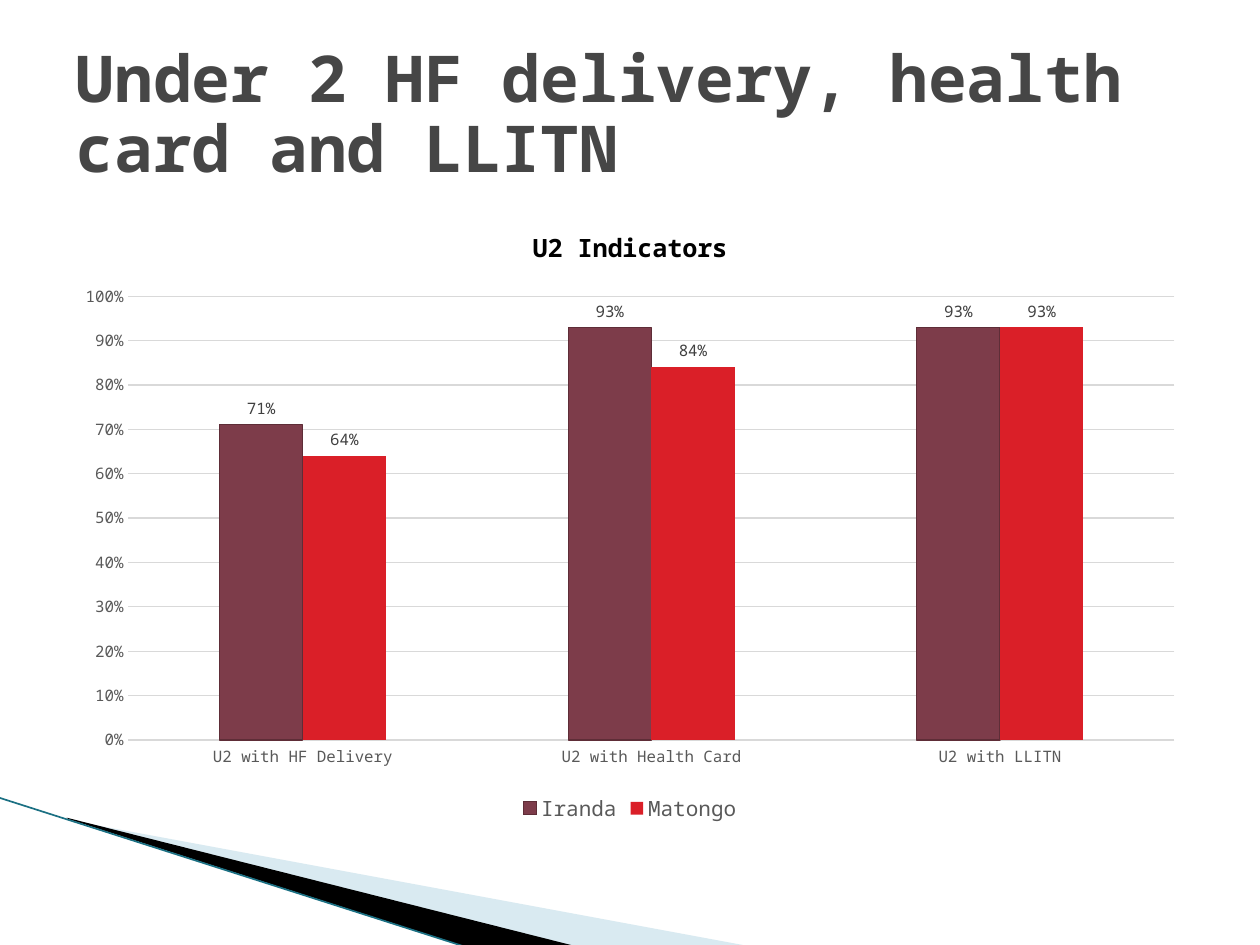
from lxml import etree
from pptx import Presentation
from pptx.chart.data import CategoryChartData as Data
from pptx.dml.color import RGBColor as RGB
from pptx.enum.chart import XL_CHART_TYPE as Kind, XL_LABEL_POSITION as Spot
from pptx.enum.chart import XL_LEGEND_POSITION as Side, XL_TICK_MARK as Tick
from pptx.enum.text import MSO_ANCHOR as Anchor, PP_ALIGN as Align
from pptx.oxml.ns import qn
from pptx.util import Inches, Pt

FACE = "Noto Sans Mono"
CATS = ["U2 with HF Delivery", "U2 with Health Card", "U2 with LLITN"]
BARS = [
    ("Iranda", [0.71, 0.93, 0.93], "7D3C4A", "5E2D37"),
    ("Matongo", [0.64, 0.84, 0.93], "DA1F28", None),
]
WEDGES = [
    ([(0.55, 6.51), (5.95, 7.51), (4.56, 7.51), (0.55, 6.5)], "A0CBDC", 40),
    ([(0.53, 6.49), (4.57, 7.51), (3.72, 7.52), (0.54, 6.5)], "000000", 100),
]


def paint(part, tint):
    """Give a fill or line fill one solid colour."""
    part.solid()
    part.fore_color.rgb = RGB.from_string(tint)


def style(font, size, tint, bold=False):
    """Set the face, size, weight and colour of a font."""
    for key, val in {"name": FACE, "size": Pt(size), "bold": bold}.items():
        setattr(font, key, val)
    font.color.rgb = RGB.from_string(tint)


def stroke(line, tint, width):
    """Set the colour and width of a line."""
    paint(line.fill, tint)
    line.width = Pt(width)


def add_wedge(slide, spots, tint, alpha):
    """Draw a closed outline with a fill of the given opacity."""
    pts = [(Inches(x), Inches(y)) for x, y in spots]
    pen = slide.shapes.build_freeform(*pts[0])
    pen.add_line_segments(pts[1:], close=True)
    shape = pen.convert_to_shape()
    shape.shadow.inherit = False
    paint(shape.fill, tint)
    shape.line.fill.background()
    if alpha < 100:
        clr = shape.fill._xPr.find(".//" + qn("a:srgbClr"))
        etree.SubElement(clr, qn("a:alpha"), val=str(alpha * 1000))


def add_edge(slide, start, end, tint, width):
    """Draw a straight line without a shadow."""
    edge = slide.shapes.add_connector(1, *map(Inches, start + end))
    stroke(edge.line, tint, width)
    etree.SubElement(edge._element.spPr, qn("a:effectLst"))


def set_title(slide, text):
    """Place and format the title."""
    title = slide.shapes.title
    box = {"left": 0.5, "top": 0.3, "width": 9, "height": 1.25}
    for key, val in box.items():
        setattr(title, key, Inches(val))
    frame = title.text_frame
    frame.text = text
    frame.word_wrap = True
    frame.vertical_anchor = Anchor.MIDDLE
    para = frame.paragraphs[0]
    para.alignment = Align.LEFT
    para.line_spacing = 0.9
    style(para.runs[0].font, 36.9, "464646", True)


def set_axes(chart):
    """Format both axes and the grid."""
    cat, val = chart.category_axis, chart.value_axis
    for axis in (cat, val):
        axis.major_tick_mark = axis.minor_tick_mark = Tick.NONE
        style(axis.tick_labels.font, 9, "595959")
    stroke(cat.format.line, "D9D9D9", 0.75)
    val.format.line.fill.background()
    val.has_major_gridlines = True
    stroke(val.major_gridlines.format.line, "D9D9D9", 0.75)
    scale = {"minimum_scale": 0, "maximum_scale": 1, "major_unit": 0.1}
    for key, num in scale.items():
        setattr(val, key, num)
    val.tick_labels.number_format = "0%"
    val.tick_labels.number_format_is_linked = False


def set_bars(plot):
    """Colour and label each series."""
    for key, val in {"gap_width": 219, "overlap": 0,
                     "vary_by_categories": False}.items():
        setattr(plot, key, val)
    for bar, (_, _, tint, rim) in zip(plot.series, BARS):
        paint(bar.format.fill, tint)
        if rim:
            stroke(bar.format.line, rim, 0.75)
        else:
            bar.format.line.fill.background()
        tags = bar.data_labels
        for key, val in {"show_value": True, "number_format": "0%",
                         "number_format_is_linked": False,
                         "position": Spot.OUTSIDE_END}.items():
            setattr(tags, key, val)
        style(tags.font, 9, "404040")


def add_bars(slide, head):
    """Add the column chart with its title and legend."""
    data = Data(number_format="0%")
    data.categories = CATS
    for name, vals, *_ in BARS:
        data.add_series(name, vals)
    box = map(Inches, (0.5, 1.62, 9, 4.95))
    chart = slide.shapes.add_chart(Kind.COLUMN_CLUSTERED, *box, data).chart
    style(chart.font, 10, "000000")
    chart.has_title = chart.has_legend = True
    frame = chart.chart_title.text_frame
    frame.text = head
    style(frame.paragraphs[0].runs[0].font, 14.4, "000000", True)
    chart.chart_title.include_in_layout = False
    chart.legend.position = Side.BOTTOM
    chart.legend.include_in_layout = False
    style(chart.legend.font, 12, "595959")
    set_axes(chart)
    set_bars(chart.plots[0])


def main():
    """Build the slide and save it."""
    deck = Presentation()
    deck.slide_width, deck.slide_height = Inches(10), Inches(7.5)
    slide = deck.slides.add_slide(deck.slide_layouts[5])
    set_title(slide, "Under 2 HF delivery, health card and LLITN")
    for wedge in WEDGES:
        add_wedge(slide, *wedge)
    add_edge(slide, (-0.01, 6.33), (3.71, 7.52), "1B7083", 0.95)
    add_bars(slide, "U2 Indicators")
    deck.save("out.pptx")


if __name__ == "__main__":
    main()
